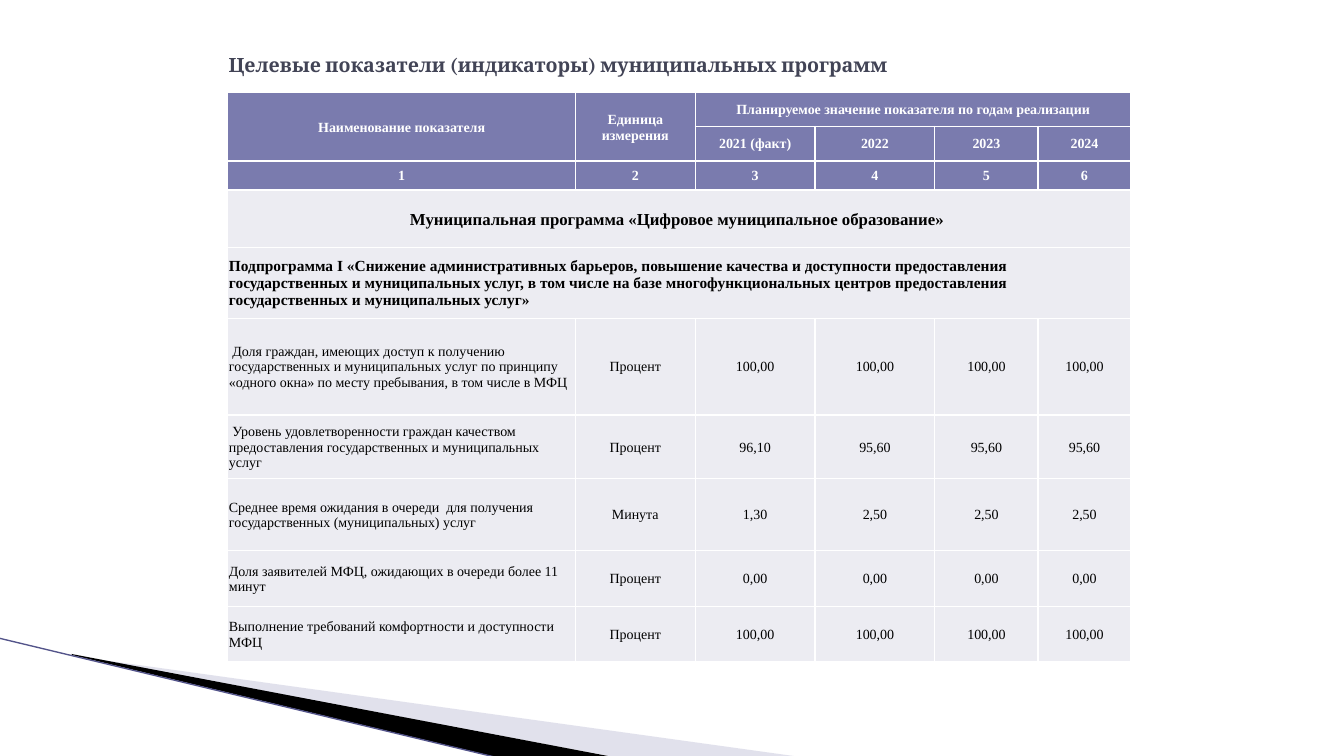
"""Build the slide with target indicators of municipal programmes."""
from dataclasses import dataclass

from lxml import etree
from pptx import Presentation
from pptx.dml.color import RGBColor
from pptx.enum.shapes import MSO_CONNECTOR
from pptx.enum.text import MSO_ANCHOR, PP_ALIGN
from pptx.oxml.ns import qn
from pptx.util import Cm, Pt

LEFT, CENTER = PP_ALIGN.LEFT, PP_ALIGN.CENTER
MIDDLE = MSO_ANCHOR.MIDDLE
STRAIGHT = MSO_CONNECTOR.STRAIGHT

HEX = {
    "white": "FFFFFF", "black": "000000", "title": "424456", "head": "7A7BAE",
    "body": "ECECF2", "pale": "B6B6D1", "line": "53548A",
}
SERIF = "Times New Roman"
COLS = [8.76, 3.02, 3.02, 3.02, 2.6, 2.34]
ROWS = [0.84, 0.81, 0.73, 1.45, 1.78, 2.44, 1.6, 1.82, 1.4, 1.4]
HEAD = 3


@dataclass
class Wedge:
    """A filled outline in the corner, with points in centimetres."""
    points: list[tuple[float, float]]
    color: str
    alpha: int = 100


@dataclass
class Span:
    """A merged block of table cells."""
    top: int
    left: int
    bottom: int
    right: int


WEDGES = [
    Wedge([(1.85, 16.53), (20.14, 19.07), (15.44, 19.07), (1.85, 16.51)], "pale", 40),
    Wedge([(1.8, 16.48), (15.47, 19.08), (12.6, 19.1), (1.83, 16.51)], "black"),
]
SPANS = [Span(0, 0, 1, 0), Span(0, 1, 1, 1), Span(0, 2, 0, 5), Span(3, 0, 3, 5), Span(4, 0, 4, 5)]
DATA = [
    ["Наименование показателя", "Единица измерения",
     "Планируемое значение показателя по годам реализации"],
    ["", "", "2021 (факт)", "2022", "2023", "2024"],
    ["1", "2", "3", "4", "5", "6"],
    ["Муниципальная программа «Цифровое муниципальное образование» "],
    ["Подпрограмма I «Снижение административных барьеров, повышение качества и доступности "
     "предоставления государственных и муниципальных услуг, в том числе на базе "
     "многофункциональных центров предоставления государственных и муниципальных услуг»"],
    [" Доля граждан, имеющих доступ к получению государственных и муниципальных услуг по "
     "принципу «одного окна» по месту пребывания, в том числе в МФЦ",
     "Процент", "100,00", "100,00", "100,00", "100,00"],
    [" Уровень удовлетворенности граждан качеством предоставления государственных и "
     "муниципальных услуг", "Процент", "96,10", "95,60", "95,60", "95,60"],
    ["Среднее время ожидания в очереди  для получения государственных (муниципальных) услуг",
     "Минута", "1,30", "2,50", "2,50", "2,50"],
    ["Доля заявителей МФЦ, ожидающих в очереди более 11 минут",
     "Процент", "0,00", "0,00", "0,00", "0,00"],
    ["Выполнение требований комфортности и доступности МФЦ",
     "Процент", "100,00", "100,00", "100,00", "100,00"],
]
SIZES = {3: 12, 4: 11}


def tint(name: str) -> RGBColor:
    """Return a named colour."""
    return RGBColor.from_string(HEX[name])


def style(para, face: str, size: float, color: str, bold: bool) -> None:
    """Format every run of a paragraph and its end mark."""
    for font in [para.font] + [run.font for run in para.runs]:
        font.name, font.size, font.bold = face, Pt(size), bold
        font.color.rgb = tint(color)


def draw_wedge(slide, wedge: Wedge) -> None:
    """Draw one filled wedge."""
    points = [(Cm(x), Cm(y)) for x, y in wedge.points]
    pen = slide.shapes.build_freeform(*points[0], scale=1.0)
    pen.add_line_segments(points[1:], close=True)
    shape = pen.convert_to_shape()
    shape.shadow.inherit = False
    shape.line.fill.background()
    shape.fill.solid()
    shape.fill.fore_color.rgb = tint(wedge.color)
    if wedge.alpha < 100:
        node = next(shape.element.spPr.iter(qn("a:srgbClr")))
        etree.SubElement(node, qn("a:alpha"), val=str(wedge.alpha * 1000))


def draw_line(slide) -> None:
    """Draw the thin line along the wedges."""
    line = slide.shapes.add_connector(STRAIGHT, Cm(-0.03), Cm(16.08), Cm(12.57), Cm(19.1))
    line.line.color.rgb = tint("line")
    line.line.width = Pt(0.95)
    etree.SubElement(line.element.spPr, qn("a:effectLst"))


def draw_title(slide) -> None:
    """Write the slide title."""
    frame = slide.shapes.add_textbox(Cm(5.51), Cm(0.76), Cm(22.86), Cm(1.75)).text_frame
    frame.word_wrap = True
    frame.vertical_anchor = MIDDLE
    frame.text = "Целевые показатели (индикаторы) муниципальных программ"
    style(frame.paragraphs[0], "Cambria", 14, "title", True)


def edge_cell(cell) -> None:
    """Give a cell white borders on all sides."""
    props = cell._tc.get_or_add_tcPr()
    for side in ("lnL", "lnR", "lnT", "lnB"):
        edge = etree.SubElement(props, qn(f"a:{side}"), w=str(Pt(1)))
        fill = etree.SubElement(edge, qn("a:solidFill"))
        etree.SubElement(fill, qn("a:srgbClr"), val=HEX["white"])


def fill_cell(cell, text: str, row: int, col: int) -> None:
    """Write and format one table cell."""
    head = row < HEAD
    edge_cell(cell)
    cell.fill.solid()
    cell.fill.fore_color.rgb = tint("head" if head else "body")
    cell.margin_left = cell.margin_right = cell.margin_top = Cm(0.03)
    cell.margin_bottom = 0
    cell.vertical_anchor = MIDDLE
    cell.text_frame.text = text
    para = cell.text_frame.paragraphs[0]
    para.alignment = LEFT if col == 0 and row > HEAD else CENTER
    style(para, SERIF, SIZES.get(row, 10), "white" if head else "black", row < HEAD + 2)


def draw_table(slide) -> None:
    """Draw the table of indicators."""
    table = slide.shapes.add_table(
        len(ROWS), len(COLS), Cm(5.74), Cm(2.34), Cm(sum(COLS)), Cm(sum(ROWS))).table
    table.horz_banding = False
    for col, width in zip(table.columns, COLS):
        col.width = Cm(width)
    for row, height in zip(table.rows, ROWS):
        row.height = Cm(height)
    for row, texts in enumerate(DATA):
        for col in range(len(COLS)):
            text = texts[col] if col < len(texts) else ""
            fill_cell(table.cell(row, col), text, row, col)
    for span in SPANS:
        table.cell(span.top, span.left).merge(table.cell(span.bottom, span.right))


def main() -> None:
    """Build and save the slide."""
    deck = Presentation()
    deck.slide_width, deck.slide_height = Cm(33.87), Cm(19.05)
    slide = deck.slides.add_slide(deck.slide_layouts[6])
    for wedge in WEDGES:
        draw_wedge(slide, wedge)
    draw_line(slide)
    draw_title(slide)
    draw_table(slide)
    deck.save("out.pptx")


if __name__ == "__main__":
    main()
